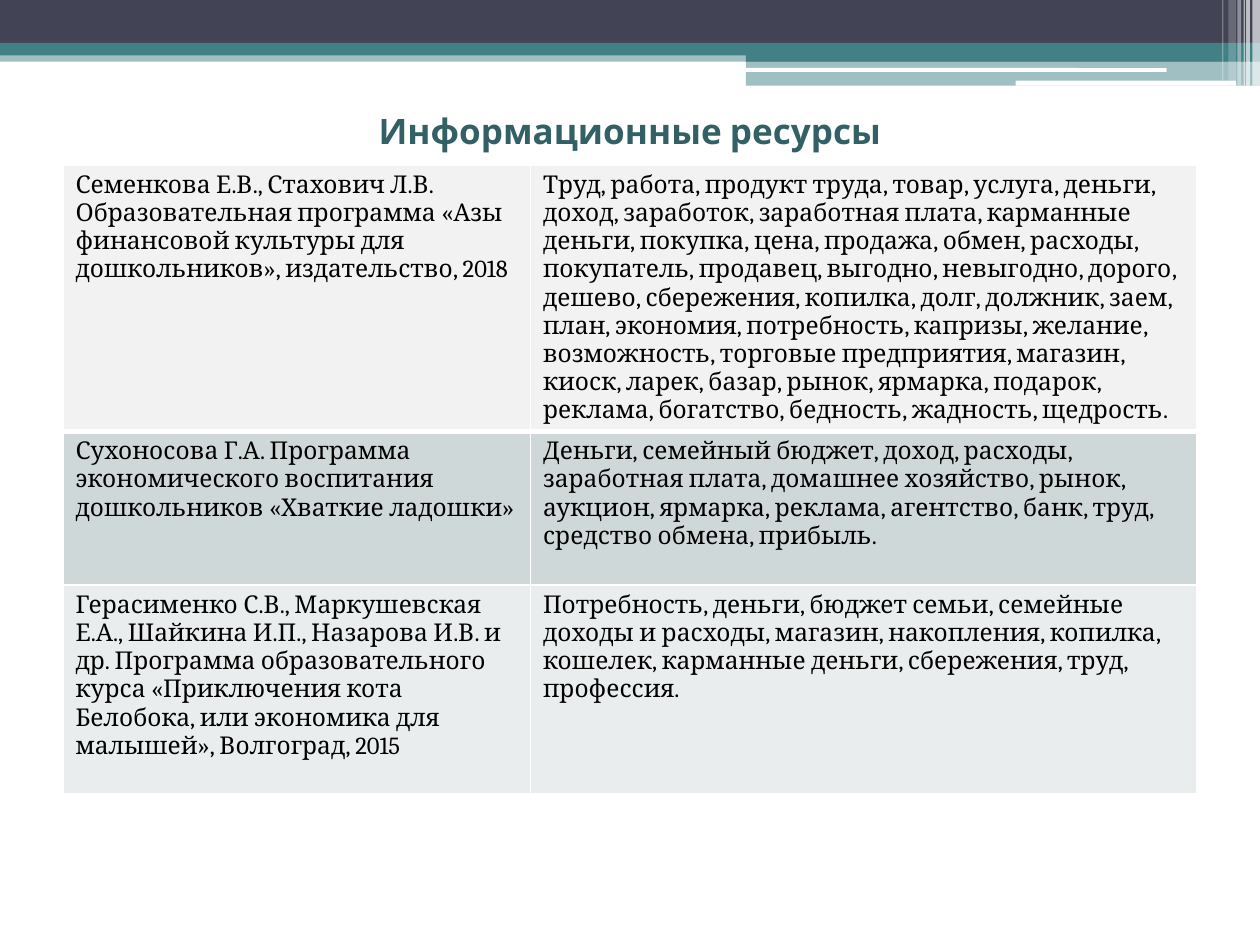
import pptx
import pptx.util
import pptx.dml.color
import pptx.enum.shapes
import pptx.enum.text
import pptx.oxml
import pptx.oxml.ns
import lxml.etree

Inches = pptx.util.Inches
Pt = pptx.util.Pt
RGBColor = pptx.dml.color.RGBColor
MSO_SHAPE = pptx.enum.shapes.MSO_SHAPE
qn = pptx.oxml.ns.qn

WHITE = RGBColor(0xFF, 0xFF, 0xFF)
BLACK = RGBColor(0x00, 0x00, 0x00)
NAVY = RGBColor(0x42, 0x44, 0x56)
TEAL = RGBColor(0x43, 0x80, 0x86)
DARK_TEAL = RGBColor(0x32, 0x60, 0x65)
ROW_FILLS = [
    RGBColor(0xF2, 0xF2, 0xF2),
    RGBColor(0xCF, 0xD8, 0xD9),
    RGBColor(0xE9, 0xED, 0xED),
]

BANDS = [
    (0, 0.4, 10, 0.09, TEAL, 50),
    (0, 0, 10, 0.34, NAVY, 100),
    (0, 0.34, 10, 0.1, TEAL, 100),
    (5.92, 0.39, 4.08, 0.1, TEAL, 100),
    (5.92, 0.48, 4.08, 0.2, TEAL, 50),
]
ROUNDED_LINES = [(5.91, 0.54, 3.35, 0.03), (8.06, 0.64, 1.75, 0.04)]
STRIPES = [
    (9.94, 0.06, 0.68, 65),
    (9.89, 0.03, 0.68, 65),
    (9.87, 0.01, 0.68, 60),
    (9.82, 0.03, 0.68, 40),
    (9.75, 0.06, 0.64, 20),
    (9.7, 0.01, 0.64, 30),
]

COLUMN_WIDTHS = [3.71, 5.29]
ROW_HEIGHTS = [2.11, 1.22, 1.66]
RESOURCES = [
    (
        "Семенкова Е.В., Стахович Л.В. Образовательная программа «Азы финансовой "
        "культуры для дошкольников», издательство, 2018",
        "Труд, работа, продукт труда, товар, услуга, деньги, доход, заработок, "
        "заработная плата, карманные деньги, покупка, цена, продажа, обмен, расходы, "
        "покупатель, продавец, выгодно, невыгодно, дорого, дешево, сбережения, "
        "копилка, долг, должник, заем, план, экономия, потребность, капризы, желание, "
        "возможность, торговые предприятия, магазин, киоск, ларек, базар, рынок, "
        "ярмарка, подарок, реклама, богатство, бедность, жадность, щедрость.",
    ),
    (
        "Сухоносова Г.А. Программа экономического воспитания дошкольников "
        "«Хваткие ладошки»",
        "Деньги, семейный бюджет, доход, расходы, заработная плата, домашнее "
        "хозяйство, рынок, аукцион, ярмарка, реклама, агентство, банк, труд, "
        "средство обмена, прибыль.",
    ),
    (
        "Герасименко С.В., Маркушевская Е.А., Шайкина И.П., Назарова И.В. и др. "
        "Программа образовательного курса «Приключения кота Белобока, или экономика "
        "для малышей», Волгоград, 2015",
        "Потребность, деньги, бюджет семьи, семейные доходы и расходы, магазин, "
        "накопления, копилка, кошелек, карманные деньги, сбережения, труд, профессия.",
    ),
]


def add_bar(page, left, top, width, height, color, opacity=100, kind=MSO_SHAPE.RECTANGLE):
    bar = page.shapes.add_shape(
        kind, Inches(left), Inches(top), Inches(width), Inches(height)
    )
    bar.shadow.inherit = False
    bar.fill.solid()
    bar.fill.fore_color.rgb = color
    bar.line.fill.background()
    if opacity < 100:
        tone = bar.fill._xPr.find(".//" + qn("a:srgbClr"))
        lxml.etree.SubElement(tone, qn("a:alpha"), val=str(opacity * 1000))


def add_header(page):
    for band in BANDS:
        add_bar(page, *band)
    for line in ROUNDED_LINES:
        add_bar(page, *line, WHITE, kind=MSO_SHAPE.ROUNDED_RECTANGLE)
    for left, width, height, opacity in STRIPES:
        add_bar(page, left, 0, width, height, WHITE, opacity)


def format_text(para, font_name, size, color, bold=False):
    for span in para.runs:
        span.font.name = font_name
        span.font.size = Pt(size)
        span.font.color.rgb = color
        span.font.bold = bold


def set_title(page, text):
    title = page.shapes.title
    title.left, title.top = Inches(0.5), Inches(0.76)
    title.width, title.height = Inches(9), Inches(0.55)
    title.text_frame.text = text
    title.text_frame.vertical_anchor = pptx.enum.text.MSO_ANCHOR.MIDDLE
    para = title.text_frame.paragraphs[0]
    para.alignment = pptx.enum.text.PP_ALIGN.CENTER
    format_text(para, "Cabin", 20, DARK_TEAL, bold=True)


def set_borders(cell, top, bottom):
    properties = cell._tc.get_or_add_tcPr()
    widths = {"lnL": 1, "lnR": 1, "lnT": top, "lnB": bottom}
    for index, (side, width) in enumerate(widths.items()):
        border = lxml.etree.Element(qn("a:" + side), w=str(Pt(width)))
        fill = lxml.etree.SubElement(border, qn("a:solidFill"))
        lxml.etree.SubElement(fill, qn("a:srgbClr"), val=str(WHITE))
        properties.insert(index, border)


def add_resource_table(page):
    frame = page.shapes.add_table(
        len(RESOURCES), len(COLUMN_WIDTHS), Inches(0.5), Inches(1.31),
        Inches(sum(COLUMN_WIDTHS)), Inches(sum(ROW_HEIGHTS)),
    )
    table = frame.table
    table.first_row = False
    table.horz_banding = False
    for column, width in zip(table.columns, COLUMN_WIDTHS):
        column.width = Inches(width)
    for index, (row, texts) in enumerate(zip(table.rows, RESOURCES)):
        row.height = Inches(ROW_HEIGHTS[index])
        for cell, text in zip(row.cells, texts):
            cell.text_frame.text = text
            format_text(cell.text_frame.paragraphs[0], "Cambria", 14, BLACK)
            cell.fill.solid()
            cell.fill.fore_color.rgb = ROW_FILLS[index]
            set_borders(cell, 3 if index == 1 else 1, 3 if index == 0 else 1)


def main():
    deck = pptx.Presentation()
    deck.slide_width, deck.slide_height = Inches(10), Inches(7.5)
    page = deck.slides.add_slide(deck.slide_layouts[5])
    add_header(page)
    set_title(page, "Информационные ресурсы")
    add_resource_table(page)
    deck.save("out.pptx")


if __name__ == "__main__":
    main()
